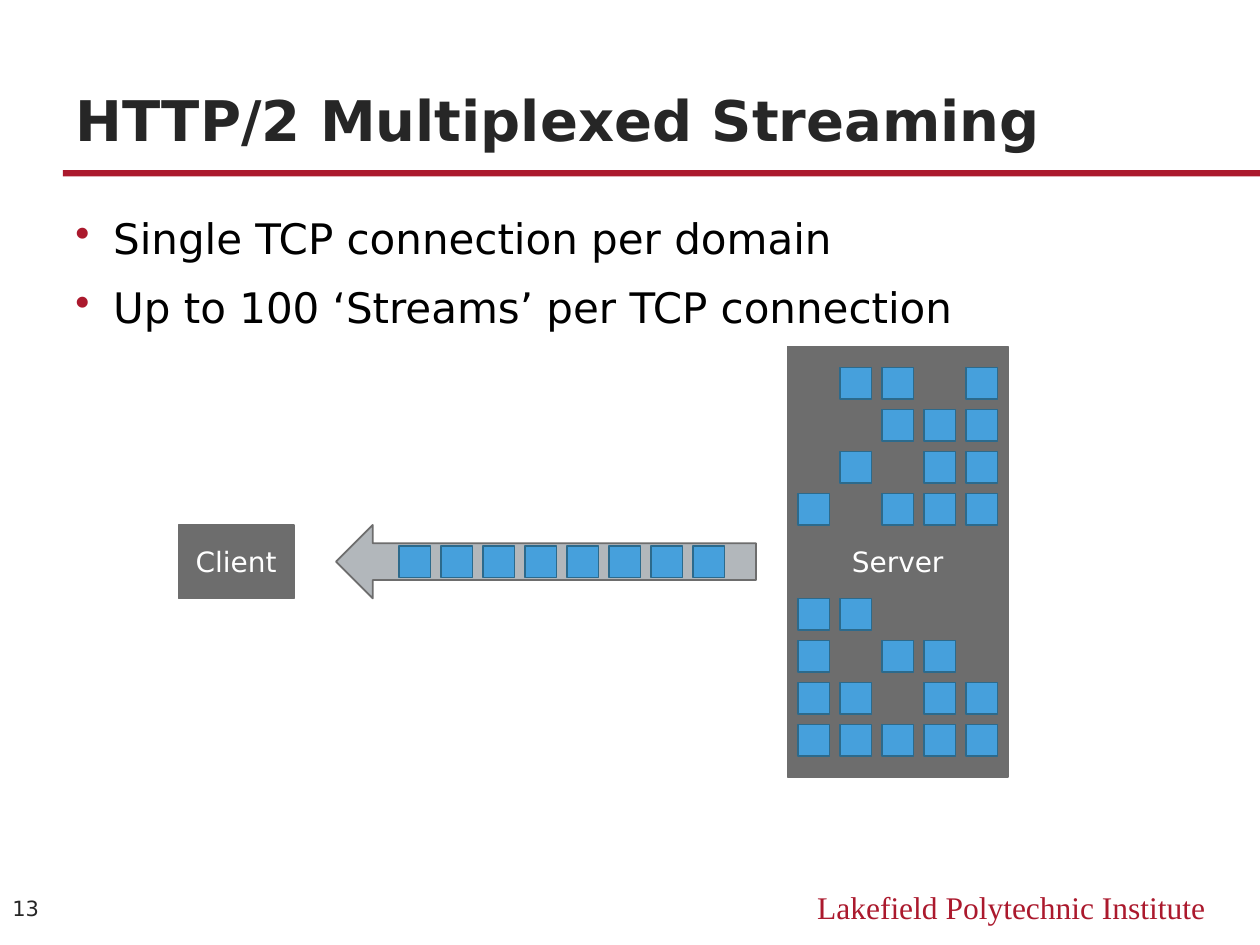
from lxml import etree
from pptx import Presentation
from pptx.dml.color import RGBColor
from pptx.enum.shapes import MSO_SHAPE
from pptx.enum.text import MSO_ANCHOR, MSO_AUTO_SIZE, PP_ALIGN
from pptx.oxml.ns import qn
from pptx.util import Inches, Pt

RECT, LEFT_ARROW = MSO_SHAPE.RECTANGLE, MSO_SHAPE.LEFT_ARROW
TOP, MIDDLE, BOTTOM = MSO_ANCHOR.TOP, MSO_ANCHOR.MIDDLE, MSO_ANCHOR.BOTTOM
LEFT, CENTER, RIGHT = PP_ALIGN.LEFT, PP_ALIGN.CENTER, PP_ALIGN.RIGHT

CRIMSON = RGBColor(0xAB, 0x19, 0x2D)
INK = RGBColor(0x26, 0x26, 0x26)
BLACK = RGBColor(0, 0, 0)
WHITE = RGBColor(0xFF, 0xFF, 0xFF)
GREY = RGBColor(0x6D, 0x6D, 0x6D)
SILVER = RGBColor(0xB2, 0xB7, 0xBB)
BLUE = RGBColor(0x46, 0xA0, 0xDC)
BLUE_EDGE = RGBColor(0x2C, 0x6A, 0x8C)

SANS, SERIF = "DejaVu Sans", "Times New Roman"

# The slide is a grid of 120 columns by 90 rows
UNIT = Inches(1) // 12
BLOCK, PITCH = 3, 4

# Blocks waiting on the server, above and below its label
UPPER_BLOCKS = (".XX.X", "..XXX", ".X.XX", "X.XXX")
LOWER_BLOCKS = ("XX...", "X.XX.", "XX.XX", "XXXXX")
STREAM_BLOCKS = ("XXXXXXXX",)


def place(box):
    """Turn (column, row, columns, rows) into slide lengths."""
    return [int(value * UNIT) for value in box]


def add_box(page, kind, box, fill, edge=None):
    shape = page.shapes.add_shape(kind, *place(box))
    shape.shadow.inherit = False
    shape.fill.solid()
    shape.fill.fore_color.rgb = fill
    if edge is None:
        shape.line.fill.background()
    else:
        shape.line.color.rgb = edge
        shape.line.width = Pt(1)
    return shape


def write(shape, text, size, color, font=SANS, align=LEFT, anchor=TOP,
          bold=False, wrap=True):
    frame = shape.text_frame
    frame.text = text
    frame.word_wrap = wrap
    frame.auto_size = MSO_AUTO_SIZE.NONE
    frame.vertical_anchor = anchor
    for para in frame.paragraphs:
        para.alignment = align
        for span in para.runs:
            span.font.name = font
            span.font.size = Pt(size)
            span.font.bold = bold
            span.font.color.rgb = color
    return frame


def add_header(page, box):
    title = page.shapes.title
    title.left, title.top, title.width, title.height = place(box)
    write(title, "HTTP/2 Multiplexed Streaming", 32, INK, anchor=BOTTOM, bold=True)
    # Rule that runs to the right edge of the slide
    left, top, _, height = box
    add_box(page, RECT, (left, top + height + 1.1, 120 - left, 0.6), CRIMSON)


def add_bullets(page, box, lines):
    body = page.shapes.add_textbox(*place(box))
    frame = write(body, "\n".join(lines), 24, BLACK)
    for para in frame.paragraphs:
        para.line_spacing = 0.95
        para.space_before = Pt(12)
        props = para._p.get_or_add_pPr()
        props.set("marL", str(Inches(0.3)))
        props.set("indent", str(-Inches(0.3)))
        color = etree.SubElement(props, qn("a:buClr"))
        etree.SubElement(color, qn("a:srgbClr"), val=str(CRIMSON))
        etree.SubElement(props, qn("a:buChar"), char="•")


def add_blocks(page, left, top, pattern):
    for row, marks in enumerate(pattern):
        for column, mark in enumerate(marks):
            if mark == "X":
                box = (left + column * PITCH, top + row * PITCH, BLOCK, BLOCK)
                add_box(page, RECT, box, BLUE, BLUE_EDGE)


def add_host(page, box, name):
    host = add_box(page, RECT, box, GREY, GREY)
    write(host, name, 16, WHITE, align=CENTER, anchor=MIDDLE, wrap=False)


def add_server(page, box):
    add_host(page, box, "Server")
    left, top = box[:2]
    add_blocks(page, left + 1, top + 2, UPPER_BLOCKS)
    add_blocks(page, left + 1, top + 24, LOWER_BLOCKS)


def add_stream(page, box):
    add_box(page, LEFT_ARROW, box, SILVER, GREY)
    add_blocks(page, box[0] + 6, box[1] + 2, STREAM_BLOCKS)


def add_footer(page, box):
    left, top, width, height = box
    number = page.shapes.add_textbox(*place((left, top, 6, height)))
    write(number, "13", 12, INK, anchor=MIDDLE)
    name = page.shapes.add_textbox(*place((left + width - 44, top, 44, height)))
    write(name, "Lakefield Polytechnic Institute", 18, CRIMSON, SERIF, RIGHT)


def main():
    deck = Presentation()
    deck.slide_width, deck.slide_height = 120 * UNIT, 90 * UNIT
    page = deck.slides.add_slide(deck.slide_layouts[5])

    add_header(page, (6, 4.5, 108, 10.6))
    add_bullets(page, (6, 20, 108, 61), (
        "Single TCP connection per domain",
        "Up to 100 ‘Streams’ per TCP connection",
    ))
    add_host(page, (17, 50, 11, 7), "Client")
    add_stream(page, (32, 50, 40, 7))
    add_server(page, (75, 33, 21, 41))
    add_footer(page, (0, 84, 116, 5))

    deck.save("out.pptx")


if __name__ == "__main__":
    main()
